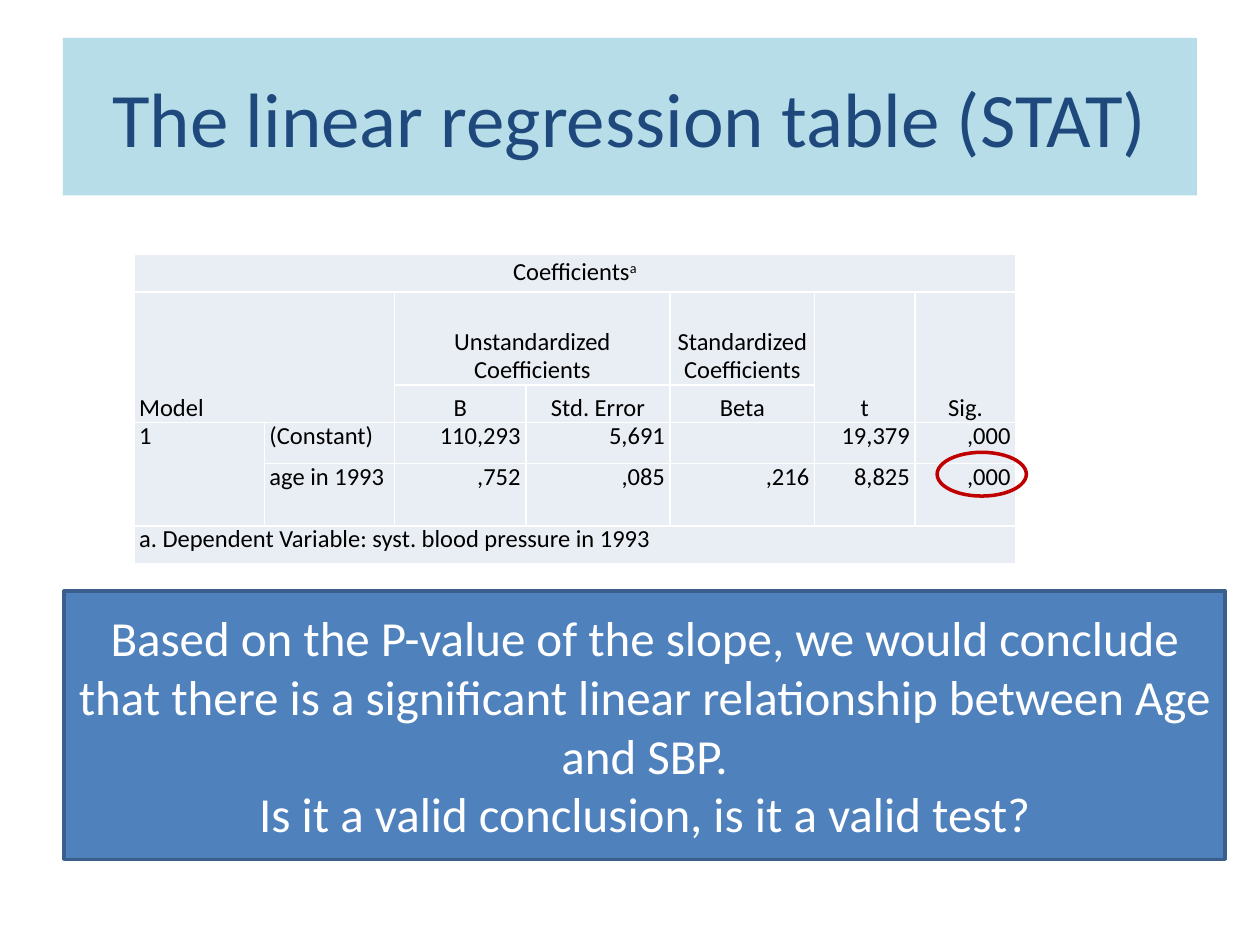
from collections import namedtuple
from dataclasses import dataclass
from itertools import product

from lxml import etree
from pptx import Presentation
from pptx.dml.color import RGBColor
from pptx.enum.shapes import MSO_SHAPE
from pptx.enum.text import MSO_ANCHOR, PP_ALIGN
from pptx.oxml.ns import qn
from pptx.util import Pt

RECTANGLE, OVAL = MSO_SHAPE.RECTANGLE, MSO_SHAPE.OVAL
TOP, MIDDLE, BOTTOM = MSO_ANCHOR.TOP, MSO_ANCHOR.MIDDLE, MSO_ANCHOR.BOTTOM
LEFT, CENTER, RIGHT = PP_ALIGN.LEFT, PP_ALIGN.CENTER, PP_ALIGN.RIGHT

Box = namedtuple("Box", "left top width height")


@dataclass(frozen=True)
class Theme:
    font: str = "Calibri"
    title_size: int = 44
    conclusion_size: int = 28
    table_size: int = 14
    table_leading: int = 16
    title_fill: str = "B7DEE8"
    title_text: str = "1F497D"
    cell_fill: str = "E9EDF4"
    cell_border: str = "FFFFFF"
    cell_text: str = "000000"
    conclusion_fill: str = "4F81BD"
    conclusion_line: str = "3A5F8C"
    conclusion_text: str = "FFFFFF"
    highlight: str = "C00000"


THEME = Theme()

COLUMN_WIDTHS = [74.5, 74.5, 75, 82.5, 82.5, 57.5, 57.5]
ROW_HEIGHTS = [21.5, 53, 21.5, 23.5, 35.5, 21.5]
SPANS = [
    ((0, 0), (0, 6)),
    ((1, 0), (2, 1)),
    ((1, 2), (1, 3)),
    ((1, 5), (2, 5)),
    ((1, 6), (2, 6)),
    ((3, 0), (4, 0)),
    ((5, 0), (5, 6)),
]
COEFFICIENTS = [
    ["Coefficients", "", "", "", "", "", ""],
    ["Model", "", "Unstandardized Coefficients", "", "Standardized Coefficients", "t", "Sig."],
    ["", "", "B", "Std. Error", "Beta", "", ""],
    ["1", "(Constant)", "110,293", "5,691", "", "19,379", ",000"],
    ["", "age in 1993", ",752", ",085", ",216", "8,825", ",000"],
    ["a. Dependent Variable: syst. blood pressure in 1993", "", "", "", "", "", ""],
]
SLOPE_ROW = 4


def rgb(color):
    return RGBColor.from_string(color)


def style_paragraph(paragraph, size, color, align):
    paragraph.alignment = align
    paragraph.font.name = THEME.font
    paragraph.font.size = Pt(size)
    paragraph.font.color.rgb = rgb(color)


def add_panel(slide, geometry, box, fill=None, line=None):
    panel = slide.shapes.add_shape(geometry, *map(Pt, box))
    panel.shadow.inherit = False
    if fill:
        panel.fill.solid()
        panel.fill.fore_color.rgb = rgb(fill)
    else:
        panel.fill.background()
    if line:
        panel.line.color.rgb = rgb(line)
        panel.line.width = Pt(2)
    else:
        panel.line.fill.background()
    return panel


def fill_text(panel, lines, size, color):
    frame = panel.text_frame
    frame.word_wrap = True
    frame.vertical_anchor = MIDDLE
    frame.text = "\n".join(lines)
    for paragraph in frame.paragraphs:
        style_paragraph(paragraph, size, color, CENTER)


def add_title(slide, box):
    banner = add_panel(slide, RECTANGLE, box, THEME.title_fill)
    fill_text(banner, ["The linear regression table (STAT)"], THEME.title_size, THEME.title_text)


def add_borders(cell):
    properties = cell._tc.get_or_add_tcPr()
    for side in ("lnL", "lnR", "lnT", "lnB"):
        border = etree.SubElement(properties, qn(f"a:{side}"), w=str(Pt(1)))
        solid = etree.SubElement(border, qn("a:solidFill"))
        etree.SubElement(solid, qn("a:srgbClr"), val=THEME.cell_border)


def cell_layout(row, column):
    if row == 0:
        return CENTER, MIDDLE
    if row < 3:
        return (LEFT if column == 0 else CENTER), BOTTOM
    return (LEFT if column < 2 else RIGHT), TOP


def style_cell(cell, text, align, anchor):
    add_borders(cell)
    cell.fill.solid()
    cell.fill.fore_color.rgb = rgb(THEME.cell_fill)
    cell.margin_top = cell.margin_bottom = 0
    cell.margin_left = cell.margin_right = Pt(3)
    cell.vertical_anchor = anchor
    cell.text = text
    paragraph = cell.text_frame.paragraphs[0]
    style_paragraph(paragraph, THEME.table_size, THEME.cell_text, align)
    paragraph.line_spacing = Pt(THEME.table_leading)


def add_coefficients(slide, box):
    rows, columns = len(ROW_HEIGHTS), len(COLUMN_WIDTHS)
    table = slide.shapes.add_table(rows, columns, *map(Pt, box)).table
    for column, width in zip(table.columns, COLUMN_WIDTHS):
        column.width = Pt(width)
    for row, height in zip(table.rows, ROW_HEIGHTS):
        row.height = Pt(height)
    for row, column in product(range(rows), range(columns)):
        style_cell(table.cell(row, column), COEFFICIENTS[row][column], *cell_layout(row, column))
    for first, last in SPANS:
        table.cell(*first).merge(table.cell(*last))

    footnote_mark = table.cell(0, 0).text_frame.paragraphs[0].add_run()
    footnote_mark.text = "a"
    footnote_mark._r.get_or_add_rPr().set("baseline", "30000")


def add_significance_ring(slide, table_box):
    slope_top = table_box.top + sum(ROW_HEIGHTS[:SLOPE_ROW])
    table_right = table_box.left + table_box.width
    ring_box = Box(table_right - 45, slope_top - 6.5, 51, 25)
    add_panel(slide, OVAL, ring_box, line=THEME.highlight)


def add_conclusion(slide, box):
    panel = add_panel(slide, RECTANGLE, box, THEME.conclusion_fill, THEME.conclusion_line)
    lines = [
        "Based on the P-value of the slope, we would conclude that there is "
        "a significant linear relationship between Age and SBP.",
        "Is it a valid conclusion, is it a valid test?",
    ]
    fill_text(panel, lines, THEME.conclusion_size, THEME.conclusion_text)


def main():
    presentation = Presentation()
    presentation.slide_width, presentation.slide_height = Pt(720), Pt(540)
    slide = presentation.slides.add_slide(presentation.slide_layouts[6])
    table_box = Box(76.5, 145.5, sum(COLUMN_WIDTHS), sum(ROW_HEIGHTS))
    add_title(slide, Box(36, 21.6, 648, 90))
    add_coefficients(slide, table_box)
    add_conclusion(slide, Box(36.7, 337.7, 663.3, 153.4))
    add_significance_ring(slide, table_box)
    presentation.save("out.pptx")


if __name__ == "__main__":
    main()
